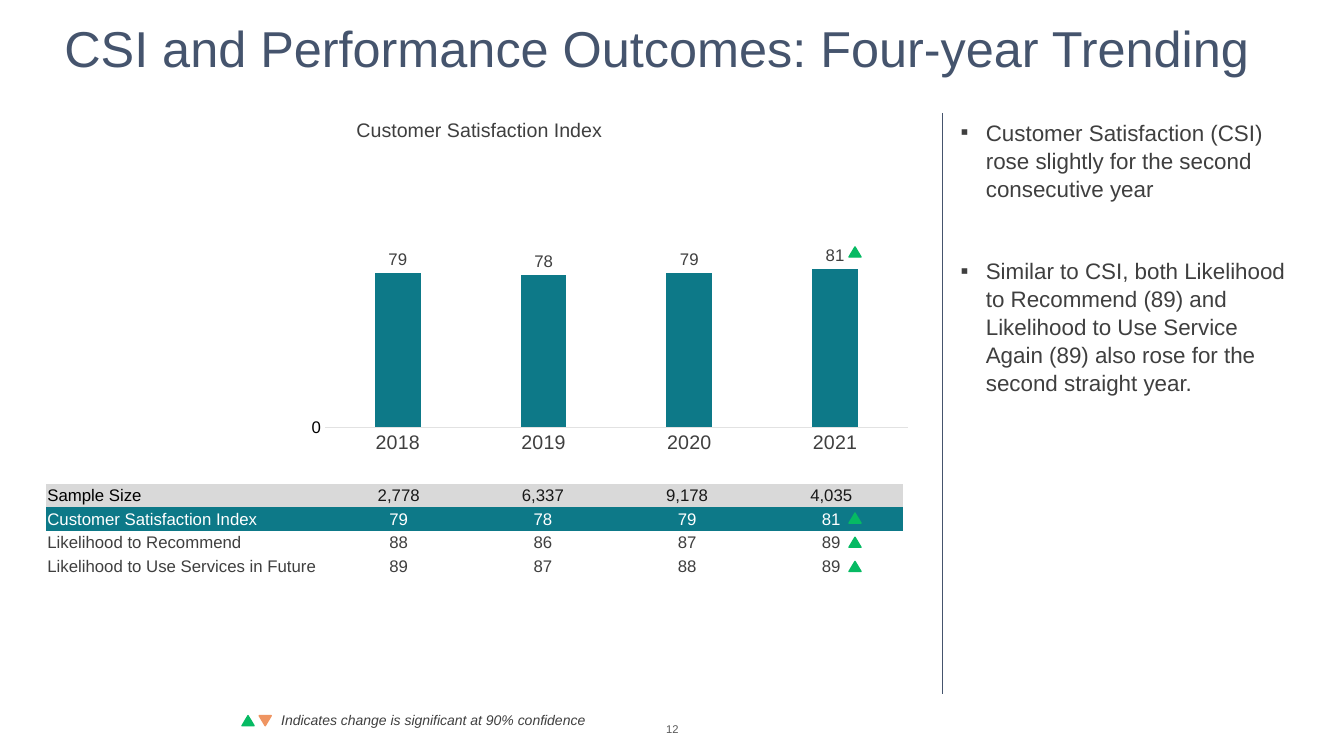
from dataclasses import dataclass

from lxml import etree
from pptx import Presentation
from pptx.chart.data import CategoryChartData
from pptx.dml.color import RGBColor
from pptx.enum.chart import XL_CHART_TYPE as ChartType
from pptx.enum.chart import XL_LABEL_POSITION as LabelPosition
from pptx.enum.chart import XL_TICK_MARK as TickMark
from pptx.enum.shapes import MSO_CONNECTOR as Connector
from pptx.enum.shapes import MSO_SHAPE as Shape
from pptx.enum.text import MSO_ANCHOR as Anchor
from pptx.enum.text import PP_ALIGN as Align
from pptx.oxml import parse_xml
from pptx.oxml.ns import nsdecls, qn
from pptx.util import Inches, Pt


@dataclass(frozen=True)
class Theme:
    font: str = "Arial"
    navy: str = "45546D"
    text: str = "3F3F3F"
    teal: str = "0D7988"
    band: str = "D9D9D9"
    black: str = "000000"
    figure: str = "181818"
    white: str = "FFFFFF"
    axis: str = "E2E2E2"
    page_number: str = "595959"
    rise: str = "06BA63"
    fall: str = "EF9562"
    title_size: int = 36
    body_size: int = 16
    heading_size: int = 14
    data_size: int = 12
    note_size: int = 10
    page_size: int = 8


THEME = Theme()
NO_TABLE_STYLE = "{2D5ABB26-0587-4C30-8999-92F81FD0307C}"
YEARS = ["2018", "2019", "2020", "2021"]
INDEX = [79, 78, 79, 81]
# Label, values, fill, label colour, value colour
ROWS = [
    ("Sample Size", ["2,778", "6,337", "9,178", "4,035"], THEME.band, THEME.black, THEME.figure),
    ("Customer Satisfaction Index", INDEX, THEME.teal, THEME.white, THEME.white),
    ("Likelihood to Recommend", [88, 86, 87, 89], None, THEME.text, THEME.text),
    ("Likelihood to Use Services in Future", [89, 87, 88, 89], None, THEME.text, THEME.text),
]
FINDINGS = [
    "Customer Satisfaction (CSI) rose slightly for the second consecutive year",
    "Similar to CSI, both Likelihood to Recommend (89) and Likelihood to Use "
    "Service Again (89) also rose for the second straight year.",
]


def rgb(code):
    return RGBColor.from_string(code)


def style_font(font, size, color, italic=False):
    font.name = THEME.font
    font.size = Pt(size)
    font.color.rgb = rgb(color)
    font.italic = italic


def add_span(para, text, size, color, italic=False):
    span = para.add_run()
    span.text = text
    style_font(span.font, size, color, italic)


def add_box(page, left, top, width, height, anchor=Anchor.TOP):
    box = page.shapes.add_textbox(Inches(left), Inches(top), Inches(width), Inches(height))
    box.text_frame.word_wrap = True
    box.text_frame.vertical_anchor = anchor
    return box.text_frame


def add_label(page, place, text, size, color, align=Align.LEFT, anchor=Anchor.TOP, italic=False):
    para = add_box(page, *place, anchor).paragraphs[0]
    para.alignment = align
    add_span(para, text, size, color, italic)
    return para


def add_bullet(para):
    props = para._p.get_or_add_pPr()
    props.set("marL", str(Inches(0.25)))
    props.set("indent", str(-Inches(0.25)))
    color = etree.SubElement(props, qn("a:buClr"))
    etree.SubElement(color, qn("a:srgbClr"), val=THEME.text)
    etree.SubElement(props, qn("a:buFont"), typeface=THEME.font)
    etree.SubElement(props, qn("a:buChar"), char="▪")


def add_findings(page):
    frame = add_box(page, 9.43, 1.12, 3.44, 5.77)
    for number, finding in enumerate(FINDINGS):
        para = frame.add_paragraph() if number else frame.paragraphs[0]
        add_bullet(para)
        para.line_spacing = 1.04
        para.space_before = Pt(39 if number else 0)
        add_span(para, finding, THEME.body_size, THEME.text)


def add_divider(page):
    line = page.shapes.add_connector(
        Connector.STRAIGHT, Inches(9.35), Inches(1.12), Inches(9.35), Inches(6.89))
    line.line.color.rgb = rgb(THEME.navy)
    line.line.width = Pt(0.5)
    etree.SubElement(line.element.spPr, qn("a:effectLst"))


def add_marker(page, left, top, color, rotation=0):
    marker = page.shapes.add_shape(
        Shape.ISOSCELES_TRIANGLE, Inches(left), Inches(top), Inches(0.12), Inches(0.1))
    marker.shadow.inherit = False
    marker.rotation = rotation
    marker.fill.solid()
    marker.fill.fore_color.rgb = rgb(color)
    marker.line.color.rgb = rgb(color)
    marker.line.width = Pt(1)


def set_plot_area(chart, left, top, width, height):
    plot_area = chart.element.find(".//" + qn("c:plotArea"))
    for layout in plot_area.findall(qn("c:layout")):
        plot_area.remove(layout)
    plot_area.insert(0, parse_xml(
        f'<c:layout {nsdecls("c")}><c:manualLayout><c:layoutTarget val="inner"/>'
        f'<c:xMode val="edge"/><c:yMode val="edge"/><c:x val="{left}"/><c:y val="{top}"/>'
        f'<c:w val="{width}"/><c:h val="{height}"/></c:manualLayout></c:layout>'))


def add_index_chart(page):
    data = CategoryChartData()
    data.categories = YEARS
    data.add_series("Series 1", INDEX)
    chart = page.shapes.add_chart(
        ChartType.COLUMN_CLUSTERED, Inches(0), Inches(1.12), Inches(9.51), Inches(4.03), data).chart
    chart.has_legend = False
    chart.has_title = False
    style_font(chart.font, THEME.data_size, THEME.text)
    set_plot_area(chart, 0.339, 0.292, 0.608, 0.482)

    # Columns and their labels
    plot = chart.plots[0]
    plot.vary_by_categories = False
    plot.gap_width = 219
    plot.overlap = -27
    column_fill = plot.series[0].format.fill
    column_fill.solid()
    column_fill.fore_color.rgb = rgb(THEME.teal)
    labels = plot.series[0].data_labels
    labels.show_value = True
    labels.position = LabelPosition.OUTSIDE_END
    labels.number_format = "#"
    labels.number_format_is_linked = False
    style_font(labels.font, THEME.data_size, THEME.text)

    # Axes
    years, scale = chart.category_axis, chart.value_axis
    for axis in (years, scale):
        axis.major_tick_mark = axis.minor_tick_mark = TickMark.NONE
        axis.has_major_gridlines = False
    style_font(years.tick_labels.font, THEME.heading_size, THEME.text)
    years.format.line.color.rgb = rgb(THEME.axis)
    years.format.line.width = Pt(0.75)
    style_font(scale.tick_labels.font, THEME.data_size, THEME.black)
    scale.format.line.fill.background()
    scale.minimum_scale, scale.maximum_scale, scale.major_unit = 0, 100, 500


def fill_cell(cell, text, fill, color, align):
    cell.margin_left = cell.margin_right = cell.margin_top = Inches(0.01)
    cell.margin_bottom = 0
    cell.vertical_anchor = Anchor.MIDDLE
    if fill:
        cell.fill.solid()
        cell.fill.fore_color.rgb = rgb(fill)
    else:
        cell.fill.background()
    para = cell.text_frame.paragraphs[0]
    para.alignment = align
    add_span(para, str(text), THEME.data_size, color)


def add_outcome_table(page):
    frame = page.shapes.add_table(
        len(ROWS), len(YEARS) + 1, Inches(0.46), Inches(4.8), Inches(8.5), Inches(0.93))
    frame.element.find(".//" + qn("a:tableStyleId")).text = NO_TABLE_STYLE
    table = frame.table
    table.first_row = table.horz_banding = False
    for number, column in enumerate(table.columns):
        column.width = Inches(1.43 if number else 2.78)
    for row, (label, values, fill, label_color, value_color) in enumerate(ROWS):
        fill_cell(table.cell(row, 0), label, fill, label_color, Align.LEFT)
        for number, value in enumerate(values, 1):
            fill_cell(table.cell(row, number), value, fill, value_color, Align.CENTER)


def main():
    deck = Presentation()
    deck.slide_width, deck.slide_height = Inches(13.33), Inches(7.5)
    page = deck.slides.add_slide(deck.slide_layouts[6])

    # Title, page number and findings
    add_label(page, (6.28, 7.12, 0.78, 0.24), "12", THEME.page_size, THEME.page_number, Align.CENTER)
    add_divider(page)
    title = add_label(page, (0.54, 0, 12.33, 1.01), "CSI and Performance Outcomes: Four-year Trending",
                      THEME.title_size, THEME.navy, anchor=Anchor.MIDDLE)
    title.line_spacing = 0.9
    add_findings(page)

    # Chart and table
    add_index_chart(page)
    add_outcome_table(page)
    add_label(page, (1.69, 1.12, 6.13, 0.34), "Customer Satisfaction Index",
              THEME.heading_size, THEME.text, Align.CENTER)

    # Significance markers and their legend
    add_label(page, (2.69, 7.01, 3.98, 0.27), "Indicates change is significant at 90% confidence",
              THEME.note_size, THEME.text, italic=True)
    add_marker(page, 2.4, 7.1, THEME.rise)
    add_marker(page, 2.57, 7.1, THEME.fall, rotation=180)
    for top in (2.45, 5.09, 5.33, 5.57):
        add_marker(page, 8.42, top, THEME.rise)

    deck.save("out.pptx")


if __name__ == "__main__":
    main()
